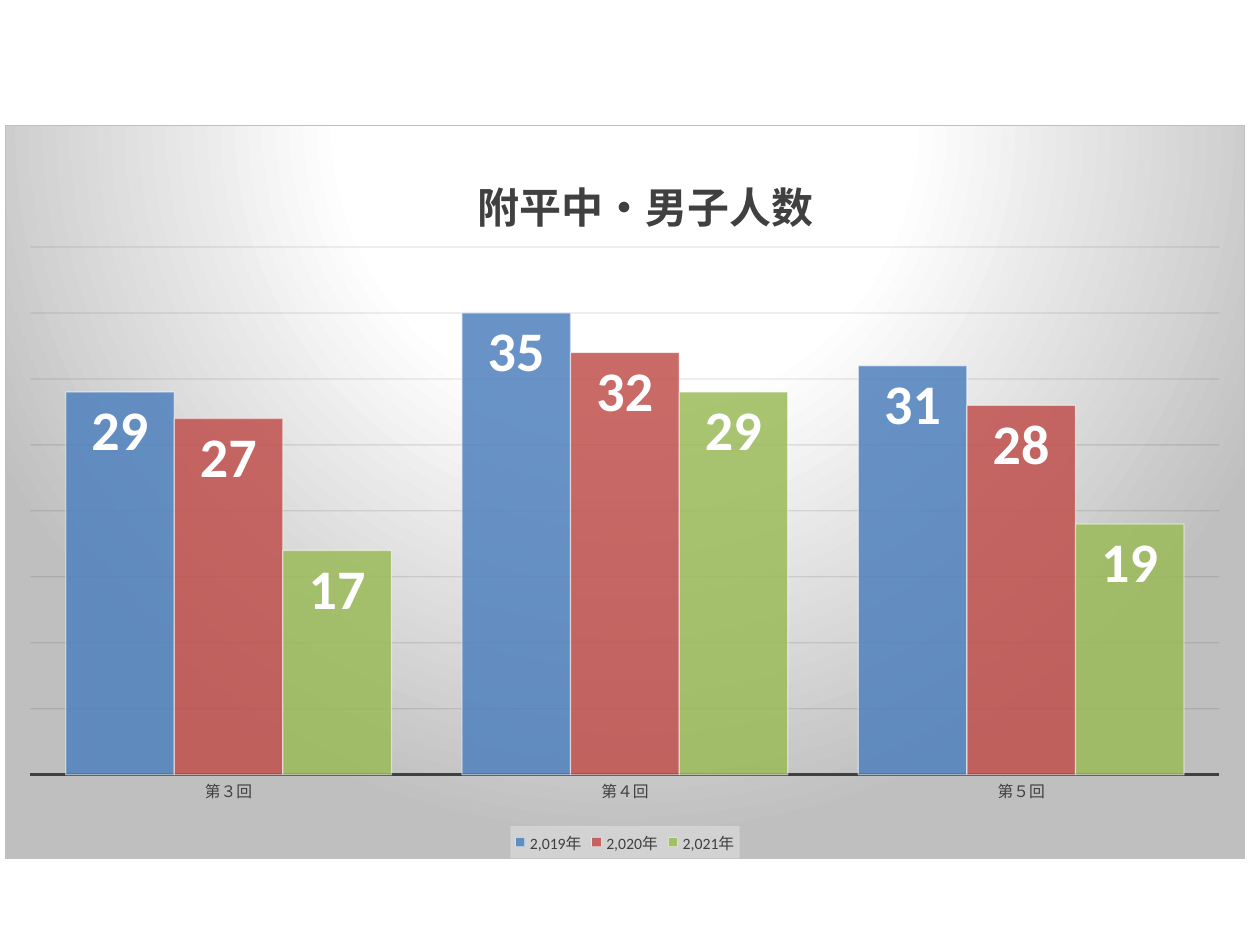
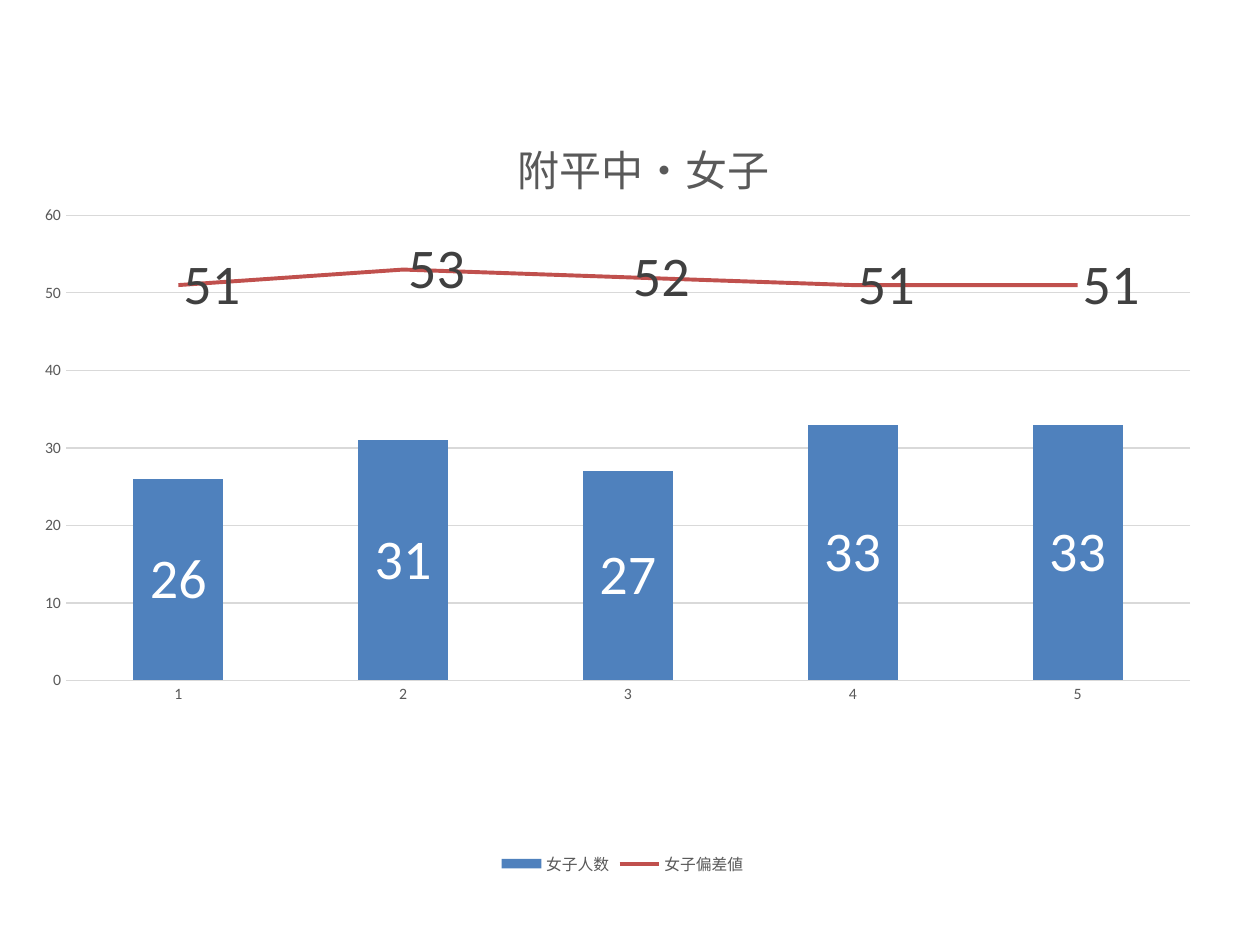
from pptx import Presentation
from pptx.chart.data import CategoryChartData
from pptx.dml.color import RGBColor
from pptx.enum.chart import (XL_CHART_TYPE, XL_LABEL_POSITION,
                             XL_LEGEND_POSITION, XL_MARKER_STYLE, XL_TICK_MARK)
from pptx.oxml import parse_xml
from pptx.oxml.ns import nsdecls, qn
from pptx.util import Inches, Pt

COLUMN = XL_CHART_TYPE.COLUMN_CLUSTERED
BOTTOM = XL_LEGEND_POSITION.BOTTOM
TOP_IN = XL_LABEL_POSITION.INSIDE_END
CENTER = XL_LABEL_POSITION.CENTER
RIGHT = XL_LABEL_POSITION.RIGHT
NO_MARK = XL_MARKER_STYLE.NONE
NO_TICK = XL_TICK_MARK.NONE

FONT = "Calibri"
HUES = {"blue": "4F81BD", "red": "C0504D", "green": "9BBB59",
        "white": "FFFFFF", "black": "000000", "ink": "404040",
        "text": "595959", "grid": "D9D9D9", "dark": "0D0D0D",
        "edge": "BFBFBF", "pale": "F2F2F2"}
NS = nsdecls("c", "a")


def tint(fill, hue, alpha=100):
    """Fill with a named colour at an opacity in percent."""
    fill.solid()
    fill.fore_color.rgb = RGBColor.from_string(HUES[hue])
    if alpha < 100:
        mark = parse_xml(f'<a:alpha {NS} val="{alpha * 1000}"/>')
        fill._xPr.find(".//" + qn("a:srgbClr")).append(mark)


def rule(line, hue, width, alpha=100):
    line.width = Pt(width)
    tint(line.fill, hue, alpha)


def style(font, size, hue, bold=False):
    font.name, font.size, font.bold = FONT, Pt(size), bold
    font.color.rgb = RGBColor.from_string(HUES[hue])


def place(node, index, **shares):
    """Give a chart part a fixed layout, in shares of the chart."""
    for old in node.findall(qn("c:layout")):
        node.remove(old)
    inner = '<c:layoutTarget val="inner"/>' if "w" in shares else ""
    modes = "".join(f'<c:{k}Mode val="edge"/>' for k in "xy")
    sizes = "".join(f'<c:{k} val="{v}"/>' for k, v in shares.items())
    node.insert(index, parse_xml(
        f"<c:layout {NS}><c:manualLayout>{inner}{modes}{sizes}"
        "</c:manualLayout></c:layout>"))


class Deck:
    def __init__(self):
        self.prs = Presentation()
        self.prs.slide_width, self.prs.slide_height = Inches(10), Inches(7.5)
        self.slide = self.chart = None

    def page(self):
        self.slide = self.prs.slides.add_slide(self.prs.slide_layouts[6])

    def columns(self, box, cats, table, gap, plot):
        """Add a column chart; box holds shares of the slide."""
        data = CategoryChartData()
        data.categories = cats
        for name, vals in table.items():
            data.add_series(name, vals)
        wide, high = self.prs.slide_width, self.prs.slide_height
        x, y, w, h = box
        frame = self.slide.shapes.add_chart(
            COLUMN, int(x * wide), int(y * high), int(w * wide),
            int(h * high), data)
        self.chart = frame.chart
        style(self.chart.font, 10, "black")
        bars = self.chart.plots[0]
        bars.gap_width, bars.overlap, bars.vary_by_categories = gap, 0, False
        area = self.chart._chartSpace.chart.plotArea
        place(area, 0, **dict(zip("xywh", plot)))

    def title(self, text, hue, x, y, bold=False):
        head = self.chart.chart_title
        run = head.text_frame.paragraphs[0].add_run()
        run.text = text
        style(run.font, 24, hue, bold)
        head.include_in_layout = False
        place(head._element, 1, x=x, y=y)

    def axes(self, hue, base, grid, top, step):
        """Style both axes; base is (hue, width), grid (hue, width, alpha)."""
        cat, val = self.chart.category_axis, self.chart.value_axis
        for axis in (cat, val):
            axis.major_tick_mark = axis.minor_tick_mark = NO_TICK
            style(axis.tick_labels.font, 9, hue)
        rule(cat.format.line, *base)
        val.format.line.fill.background()
        val.minimum_scale, val.maximum_scale, val.major_unit = 0, top, step
        val.has_major_gridlines = True
        rule(val.major_gridlines.format.line, *grid)

    def legend(self, hue):
        self.chart.has_legend = True
        key = self.chart.legend
        key.position, key.include_in_layout = BOTTOM, False
        style(key.font, 9, hue)

    def labels(self, series, hue, spot, bold=False):
        tags = series.data_labels
        tags.show_value, tags.position = True, spot
        style(tags.font, 32, hue, bold)

    def glow(self):
        """Put a round gradient behind the chart and a veil behind the key."""
        stops = "".join(
            f'<a:gs pos="{pos * 1000}"><a:srgbClr val="{HUES[hue]}"/></a:gs>'
            for pos, hue in ((0, "white"), (39, "white"), (100, "edge")))
        self.chart._chartSpace.chart.addnext(parse_xml(
            f"<c:spPr {NS}><a:gradFill><a:gsLst>{stops}</a:gsLst>"
            '<a:path path="circle"><a:fillToRect l="50000" t="-80000" '
            'r="50000" b="180000"/></a:path></a:gradFill><a:ln w="9525">'
            f'<a:solidFill><a:srgbClr val="{HUES["edge"]}"/></a:solidFill>'
            "</a:ln></c:spPr>"))
        key = self.chart.legend._element
        key.find(qn("c:txPr")).addprevious(parse_xml(
            f'<c:spPr {NS}><a:solidFill><a:srgbClr val="{HUES["pale"]}">'
            '<a:alpha val="39000"/></a:srgbClr></a:solidFill></c:spPr>'))

    def curve(self):
        """Turn the last column series into a line and return it."""
        bars = self.chart.plots[0]._element
        ser = bars.findall(qn("c:ser"))[-1]
        for flag in ser.findall(qn("c:invertIfNegative")):
            ser.remove(flag)
        ids = "".join(f'<c:axId val="{a.get("val")}"/>'
                      for a in bars.findall(qn("c:axId")))
        plot = parse_xml(
            f'<c:lineChart {NS}><c:grouping val="standard"/>'
            f'<c:varyColors val="0"/><c:marker val="1"/>{ids}</c:lineChart>')
        plot.insert(2, ser)
        bars.addnext(plot)
        line = self.chart.plots[1].series[0]
        line.smooth = False
        line.marker.style = NO_MARK
        return line


def boys(deck):
    deck.page()
    deck.columns((0.004, 0.132, 0.984, 0.777), ["第３回", "第４回", "第５回"],
                 {"2,019年": (29, 35, 31), "2,020年": (27, 32, 28),
                  "2,021年": (17, 29, 19)}, 65, (0.02, 0.166, 0.96, 0.72))
    deck.title("附平中・男子人数", "ink", 0.375, 0.05, True)
    deck.axes("ink", ("ink", 1.5), ("dark", 0.75, 10), 40, 5)
    deck.chart.value_axis.visible = False
    deck.legend("ink")
    deck.glow()
    for bar, hue in zip(deck.chart.series, ("blue", "red", "green")):
        tint(bar.format.fill, hue, 85)
        rule(bar.format.line, "white", 0.75, 50)
        deck.labels(bar, "white", TOP_IN, True)


def girls(deck):
    deck.page()
    deck.columns((0, 0.091, 0.988, 0.84), list("12345"),
                 {"女子人数": (26, 31, 27, 33, 33),
                  "女子偏差値": (51, 53, 52, 51, 51)},
                 150, (0.053, 0.163, 0.903, 0.586))
    deck.title("附平中・女子", "text", 0.41, 0.05)
    deck.axes("text", ("grid", 0.75), ("grid", 0.75), 60, 10)
    deck.legend("text")
    score = deck.curve()
    rule(score.format.line, "red", 2.25)
    deck.labels(score, "ink", RIGHT)
    count = deck.chart.plots[0].series[0]
    tint(count.format.fill, "blue")
    deck.labels(count, "white", CENTER)


def main():
    deck = Deck()
    boys(deck)
    girls(deck)
    deck.prs.save("out.pptx")


if __name__ == "__main__":
    main()
